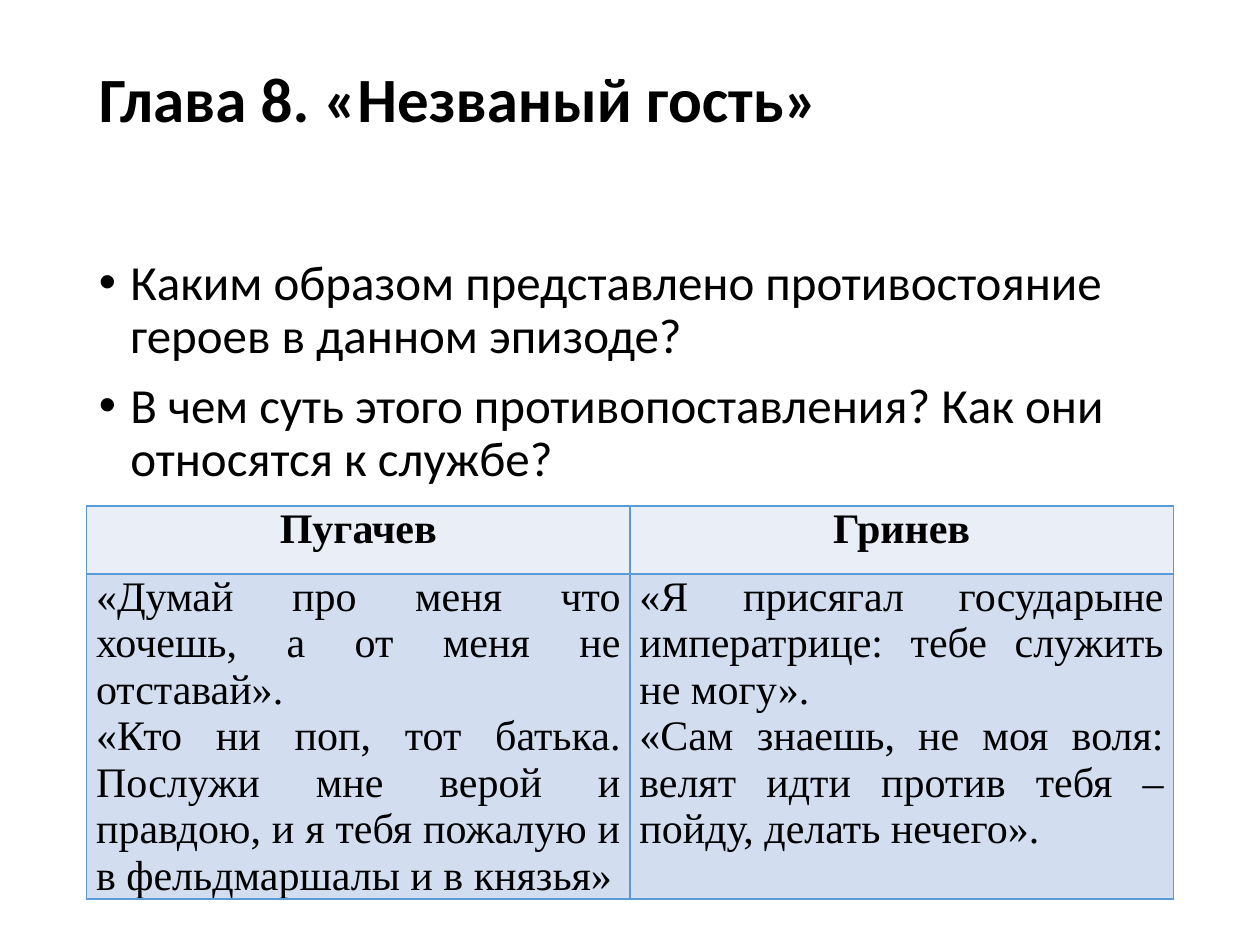
from lxml import etree
from pptx import Presentation
from pptx.dml.color import RGBColor
from pptx.enum.shapes import MSO_SHAPE
from pptx.enum.text import MSO_ANCHOR, PP_ALIGN
from pptx.oxml.ns import qn
from pptx.util import Pt

RECT = MSO_SHAPE.RECTANGLE
MID, TOP = MSO_ANCHOR.MIDDLE, MSO_ANCHOR.TOP
LEFT, CENTER, JUST = PP_ALIGN.LEFT, PP_ALIGN.CENTER, PP_ALIGN.JUSTIFY

TITLE = "Глава 8. «Незваный гость»"
ASKS = [
    "Каким образом представлено противостояние героев в данном эпизоде?",
    "В чем суть этого противопоставления? Как они относятся к службе?",
]
HEROES = {
    "Пугачев": [
        "«Думай про меня что хочешь, а от меня не отставай».",
        "«Кто ни поп, тот батька. Послужи мне верой и правдою, "
        "и я тебя пожалую и в фельдмаршалы и в князья»",
    ],
    "Гринев": [
        "«Я присягал государыне императрице: тебе служить не могу».",
        "«Сам знаешь, не моя воля: велят идти против тебя – пойду, делать нечего».",
    ],
}

THEME = {
    "ink": "000000", "back": "FFFFFF", "line": "5B9BD5",
    "head": "EAEFF7", "body": "D2DEEF",
    "sans": "Calibri", "serif": "Times New Roman",
    "title": 36, "ask": 28, "cell": 24,
}
EDGE, WIDE = 49.5, 621
ROWS = [39, 146]


def write(frame, lines, face, size, bold=False, align=LEFT, space=None, gap=0, dot=False):
    """Fill a text frame with one paragraph per line."""
    for i, line in enumerate(lines):
        para = frame.add_paragraph() if i else frame.paragraphs[0]
        if dot:
            props = para._p.get_or_add_pPr()
            props.set("marL", str(Pt(18)))
            props.set("indent", str(-Pt(18)))
            etree.SubElement(props, qn("a:buFont"), typeface="Arial")
            etree.SubElement(props, qn("a:buChar"), char="•")
        para.alignment = align
        if space:
            para.line_spacing = space
        if i and gap:
            para.space_before = Pt(gap)
        run = para.add_run()
        run.text = line
        font = run.font
        font.name, font.size, font.bold = THEME[face], Pt(THEME[size]), bold
        font.color.rgb = RGBColor.from_string(THEME["ink"])


def tint(fill, tone):
    """Make a fill solid in a theme colour."""
    fill.solid()
    fill.fore_color.rgb = RGBColor.from_string(THEME[tone])


def add_box(slide, top, high, anchor, alpha, lines, **style):
    """Add a translucent text panel across the content width."""
    box = slide.shapes.add_shape(RECT, Pt(EDGE), Pt(top), Pt(WIDE), Pt(high))
    box.shadow.inherit = False
    box.line.fill.background()
    tint(box.fill, "back")
    color = box._element.spPr.find(".//" + qn("a:srgbClr"))
    etree.SubElement(color, qn("a:alpha"), val=str(alpha * 1000))
    frame = box.text_frame
    frame.word_wrap = True
    frame.vertical_anchor = anchor
    write(frame, lines, "sans", space=0.9, **style)


def paint(cell, tone):
    """Give a cell its margins, borders and fill."""
    cell.margin_left = cell.margin_right = Pt(5.4)
    cell.margin_top = cell.margin_bottom = 0
    props = cell._tc.get_or_add_tcPr()
    for side in ("lnL", "lnR", "lnT", "lnB"):
        line = etree.SubElement(props, qn("a:" + side), w=str(Pt(1)))
        solid = etree.SubElement(line, qn("a:solidFill"))
        etree.SubElement(solid, qn("a:srgbClr"), val=THEME["line"])
    tint(cell.fill, tone)


def add_grid(slide, top):
    """Add the table that sets the heroes side by side."""
    grid = slide.shapes.add_table(
        len(ROWS), len(HEROES), Pt(EDGE), Pt(top), Pt(WIDE), Pt(sum(ROWS))).table
    grid.first_row = grid.horz_banding = False
    for row, high in zip(grid.rows, ROWS):
        row.height = Pt(high)
    for col, (name, quotes) in enumerate(HEROES.items()):
        grid.columns[col].width = Pt(WIDE / len(HEROES))
        head, body = grid.cell(0, col), grid.cell(1, col)
        paint(head, "head")
        paint(body, "body")
        write(head.text_frame, [name], "serif", "cell", bold=True, align=CENTER)
        write(body.text_frame, quotes, "serif", "cell", align=JUST)


def main():
    """Build the slide and save it."""
    deck = Presentation()
    deck.slide_width, deck.slide_height = Pt(720), Pt(540)
    slide = deck.slides.add_slide(deck.slide_layouts[6])
    add_box(slide, 31, 54.7, MID, 73, [TITLE], size="title", bold=True)
    add_box(slide, 144, 342.7, TOP, 71, ASKS, size="ask", gap=10, dot=True)
    add_grid(slide, 289.1)
    deck.save("out.pptx")


if __name__ == "__main__":
    main()
